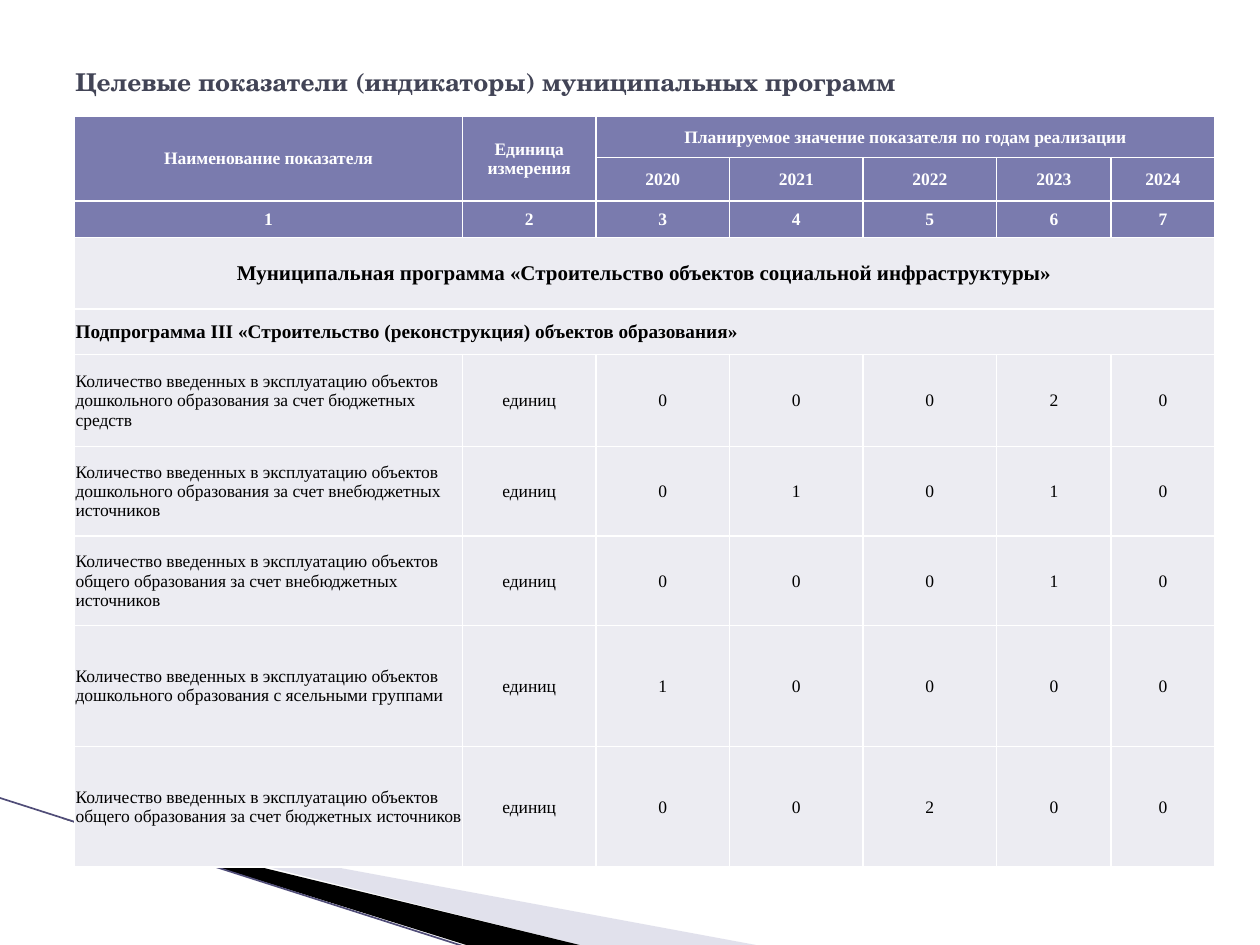
from lxml import etree
from pptx import Presentation
from pptx import util as u
from pptx.dml.color import RGBColor
from pptx.enum import shapes, text
from pptx.oxml import ns

HEADER = [
    ["Наименование показателя", "Единица измерения",
     "Планируемое значение показателя по годам реализации", "", "", "", ""],
    ["", "", "2020", "2021", "2022", "2023", "2024"],
    ["1", "2", "3", "4", "5", "6", "7"],
]
PROGRAM = "Муниципальная программа «Строительство объектов социальной инфраструктуры»"
SUBPROGRAM = "Подпрограмма III «Строительство (реконструкция) объектов образования»"
INDICATORS = [
    ("дошкольного образования за счет бюджетных средств", "00020"),
    ("дошкольного образования за счет внебюджетных источников", "01010"),
    ("общего образования за счет внебюджетных источников", "00010"),
    ("дошкольного образования с ясельными группами", "10000"),
    ("общего образования за счет бюджетных источников", "00200"),
]
COLUMN_WIDTHS = [30.8, 10.6, 10.6, 10.6, 10.6, 9.1, 8.2]
ROW_HEIGHTS = [3.3, 3.2, 2.9, 5.7, 3.6, 7.3, 7.1, 7.1, 9.6, 9.6]


def color(value):
    return RGBColor.from_string(value)


def add_element(parent, tag, **attributes):
    return etree.SubElement(parent, ns.qn(tag), attributes)


class SlideBuilder:
    """Places elements on a grid of 100 columns by 75 rows."""

    title_font, table_font = "TeX Gyre Schola", "Times New Roman"
    title_color, header_fill, body_fill = "424456", "7A7BAE", "ECECF2"
    white, black = "FFFFFF", "000000"

    def __init__(self, presentation):
        self.cell = presentation.slide_width / 100
        self.slide = presentation.slides.add_slide(presentation.slide_layouts[6])

    def length(self, cells):
        return u.Emu(round(cells * self.cell))

    def box(self, *cells):
        return [self.length(value) for value in cells]

    def set_text(self, frame, content, font, size, fill, bold, align):
        frame.text = content
        paragraph = frame.paragraphs[0]
        paragraph.alignment = align
        for run in paragraph.runs:
            run.font.name, run.font.size, run.font.bold = font, u.Pt(size), bold
            run.font.color.rgb = color(fill)

    def polygon(self, points, fill, opacity=100):
        builder = self.slide.shapes.build_freeform(*points[0], scale=self.cell)
        builder.add_line_segments(points[1:])
        shape = builder.convert_to_shape()
        shape.shadow.inherit = False
        shape.line.fill.background()
        shape.fill.solid()
        shape.fill.fore_color.rgb = color(fill)
        if opacity < 100:
            tint = shape._element.spPr.find(ns.qn("a:solidFill"))[0]
            add_element(tint, "a:alpha", val=str(opacity * 1000))

    def line(self, start, end, fill, width):
        connector = self.slide.shapes.add_connector(
            shapes.MSO_CONNECTOR.STRAIGHT, *self.box(*start, *end))
        connector.line.color.rgb = color(fill)
        connector.line.width = u.Pt(width)
        add_element(connector._element.spPr, "a:effectLst")

    def title(self, content, *place):
        frame = self.slide.shapes.add_textbox(*self.box(*place)).text_frame
        frame.word_wrap = True
        frame.vertical_anchor = text.MSO_ANCHOR.MIDDLE
        self.set_text(frame, content, self.title_font, 14, self.title_color, True,
                      text.PP_ALIGN.LEFT)

    def table(self, left, top, widths, heights):
        table = self.slide.shapes.add_table(
            len(heights), len(widths),
            *self.box(left, top, sum(widths), sum(heights))).table
        for column, width in zip(table.columns, widths):
            column.width = self.length(width)
        for row, height in zip(table.rows, heights):
            row.height = self.length(height)
        return table

    def table_cell(self, cell, content, header=False, size=10, bold=False, centered=True):
        cell.margin_left = cell.margin_right = cell.margin_top = u.Inches(0.01)
        cell.margin_bottom = 0
        cell.vertical_anchor = text.MSO_ANCHOR.MIDDLE
        properties = cell._tc.get_or_add_tcPr()
        for side in ("a:lnL", "a:lnR", "a:lnT", "a:lnB"):
            border = add_element(properties, side, w=str(u.Pt(1)))
            add_element(add_element(border, "a:solidFill"), "a:srgbClr", val=self.white)
        cell.fill.solid()
        cell.fill.fore_color.rgb = color(self.header_fill if header else self.body_fill)
        self.set_text(cell.text_frame, content, self.table_font, size,
                      self.white if header else self.black, bold,
                      text.PP_ALIGN.CENTER if centered else text.PP_ALIGN.LEFT)


def fill_indicators(builder, table):
    blanks = [""] * (len(COLUMN_WIDTHS) - 1)
    rows = [(values, dict(header=True, bold=True)) for values in HEADER]
    rows.append(([PROGRAM, *blanks], dict(size=12, bold=True)))
    rows.append(([SUBPROGRAM, *blanks], dict(size=11, bold=True, centered=False)))
    for name, values in INDICATORS:
        label = "Количество введенных в эксплуатацию объектов " + name
        rows.append(([label, "единиц", *values], {}))

    for row, (values, style) in enumerate(rows):
        for column, value in enumerate(values):
            is_label = not style and column == 0
            cell_style = dict(centered=False) if is_label else style
            builder.table_cell(table.cell(row, column), value, **cell_style)

    for first, last in [((0, 0), (1, 0)), ((0, 1), (1, 1)), ((0, 2), (0, 6)),
                        ((3, 0), (3, 6)), ((4, 0), (4, 6))]:
        table.cell(*first).merge(table.cell(*last))


def main():
    presentation = Presentation()
    presentation.slide_width, presentation.slide_height = u.Inches(10), u.Inches(7.5)
    builder = SlideBuilder(presentation)
    builder.polygon([(5.5, 65.1), (59.5, 75.1), (45.6, 75.1), (5.5, 65)], "B6B6D1", 40)
    builder.polygon([(5.3, 64.9), (45.7, 75.1), (37.2, 75.2), (5.4, 65)], builder.black)
    builder.line((-0.1, 63.3), (37.1, 75.2), "504D78", 0.95)
    builder.title("Целевые показатели (индикаторы) муниципальных программ", 5, 3, 90, 6.9)
    fill_indicators(builder, builder.table(5.9, 9.2, COLUMN_WIDTHS, ROW_HEIGHTS))
    presentation.save("out.pptx")


if __name__ == "__main__":
    main()
